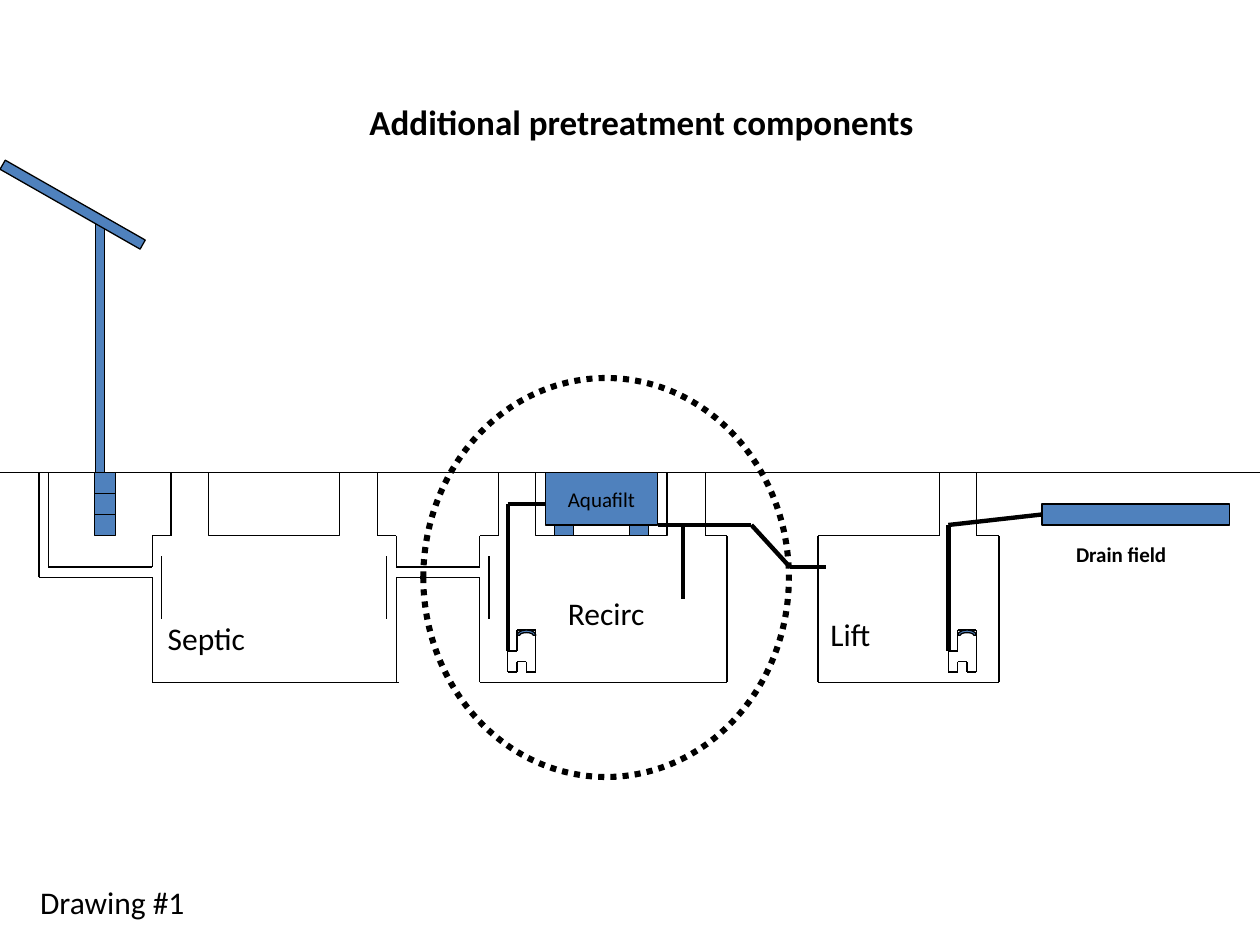
from lxml import etree
from pptx import Presentation
from pptx import util as u
from pptx.dml.color import RGBColor
from pptx.enum import dml, shapes, text
from pptx.oxml.ns import qn

COL, ROW, MARGIN = 0.0744, 1 / 12, 0.012
GROUND = 45
BLACK, BLUE = "000000", "4F81BD"
RECT = shapes.MSO_SHAPE.RECTANGLE


def color(hex_value):
    return RGBColor.from_string(hex_value)


def place(box, c, r):
    return u.Inches(MARGIN + (box[0] + c) * COL), u.Inches((box[1] + r) * ROW)


def size(w, h):
    return u.Inches(w * COL), u.Inches(h * ROW)


def polyline(s, box, points, width=0.75):
    for start, end in zip(points, points[1:]):
        line = s.shapes.add_connector(
            shapes.MSO_CONNECTOR.STRAIGHT, *place(box, *start), *place(box, *end))
        line.line.color.rgb = color(BLACK)
        line.line.width = u.Pt(width)
        etree.SubElement(line._element.spPr, qn("a:effectLst"))


def block(s, box, c, r, w, h, fill=BLUE, kind=RECT):
    sp = s.shapes.add_shape(kind, *place(box, c, r), *size(w, h))
    sp.shadow.inherit = False
    if fill:
        sp.fill.solid()
        sp.fill.fore_color.rgb = color(fill)
    else:
        sp.fill.background()
    sp.line.color.rgb = color(BLACK)
    sp.line.width = u.Pt(0.75)
    return sp


def write(sp, wording, points, bold=False, align=text.PP_ALIGN.LEFT,
          anchor=text.MSO_ANCHOR.TOP, wrap=False):
    tf = sp.text_frame
    tf.word_wrap = wrap
    tf.vertical_anchor = anchor
    p = tf.paragraphs[0]
    p.alignment = align
    r = p.add_run()
    r.text = wording
    r.font.name = "Calibri"
    r.font.size = u.Pt(points)
    r.font.bold = bold
    r.font.color.rgb = color(BLACK)


def label(s, box, c, r, w, h, wording, points=18, bold=False):
    sp = s.shapes.add_textbox(*place(box, c, r), *size(w, h))
    write(sp, wording, points, bold)


def heading(s, box, wording):
    sp = s.shapes.title
    sp.left, sp.top = place(box, 0, 0)
    sp.width, sp.height = size(62.8, 5.3)
    write(sp, wording, 20, bold=True, wrap=True)


def solar_panel(s, box):
    for i in range(3):
        block(s, box, 0, 2 * i, 2.25, 2)
    block(s, box, 0.1, -24, 1, 24)
    panel = block(s, box, -10.9, -26, 17.2, 1)
    panel.rotation = 29.7


def pump(s, box):
    polyline(s, box, [(1, 0), (3, 0), (3, 4), (2, 4), (2, 3), (1, 3),
                      (1, 4), (0, 4), (0, 2), (1, 2), (1, 0)])
    block(s, box, 1, 0, 2, 1, kind=shapes.MSO_SHAPE.BLOCK_ARC)


def inlet_shoulder(s, box, c=0, turn=1):
    polyline(s, box, [(c + 2 * turn, 0), (c + 2 * turn, 6), (c, 6), (c, 9)])
    polyline(s, box, [(c, 10), (c, 20)])
    polyline(s, box, [(c + turn, 8), (c + turn, 14)])


def septic_tank(s, box):
    polyline(s, box, [(-11.1, 0), (-11.1, 9), (0, 9)])
    polyline(s, box, [(-12.1, 0), (-12.1, 10), (0, 10)])
    inlet_shoulder(s, box)
    inlet_shoulder(s, box, 26, -1)
    polyline(s, box, [(0, 20), (26.3, 20)])
    for row in (9, 10):
        polyline(s, box, [(26, row), (34.9, row)])
    block(s, box, 6, 0, 14, 6, fill=None)
    label(s, box, 0.3, 13.4, 11, 4.8, "Septic")


def recirculation_tank(s, box):
    inlet_shoulder(s, box)
    polyline(s, box, [(0, 20), (26.4, 20), (26.4, 6), (24.1, 6), (24.1, 0)])
    block(s, box, 6, 0, 14, 6, fill=None)
    filter_pod = block(s, box, 7, 0, 12, 5)
    write(filter_pod, "Aquafilt", 12, align=text.PP_ALIGN.CENTER,
          anchor=text.MSO_ANCHOR.MIDDLE)
    for foot in (8, 16):
        block(s, box, foot, 5, 2, 1)
    pump(s, (box[0] + 3, box[1] + 15))
    polyline(s, box, [(3, 17), (3, 3), (7, 3)], 2.5)
    polyline(s, box, [(19, 5), (29, 5), (33.1, 9), (37, 9)], 2.5)
    polyline(s, box, [(21.7, 5), (21.7, 12)], 2.25)
    label(s, box, 8.1, 11, 11, 4.8, "Recirc")
    ring = block(s, box, -6, -9, 39, 38, fill=None, kind=shapes.MSO_SHAPE.OVAL)
    ring.line.width = u.Pt(3.5)
    ring.line.dash_style = dml.MSO_LINE.ROUND_DOT


def lift_station(s, box):
    polyline(s, box, [(13, 0), (13, 6), (0, 6), (0, 20), (19.3, 20),
                      (19.3, 6), (16.9, 6), (16.9, 0)])
    pump(s, (box[0] + 13.9, box[1] + 15))
    polyline(s, box, [(13.9, 17), (13.9, 5), (23.9, 4)], 2.5)
    label(s, box, 0, 13, 7.1, 4.8, "Lift")


def drain_field(s, box):
    block(s, box, 0, 0, 20, 2)
    label(s, box, 2.3, 3, 17.7, 3.6, "Drain field", 12, bold=True)


def main():
    prs = Presentation()
    prs.slide_width, prs.slide_height = u.Inches(10), u.Inches(7.5)
    s = prs.slides.add_slide(prs.slide_layouts[5])
    heading(s, (37.9, 9), "Additional pretreatment components")
    polyline(s, (0, GROUND), [(-MARGIN / COL, 0), ((10 - MARGIN) / COL, 0)])
    solar_panel(s, (9.9, GROUND))
    septic_tank(s, (16.1, GROUND))
    recirculation_tank(s, (51, GROUND))
    lift_station(s, (87.1, GROUND))
    drain_field(s, (111, GROUND + 3))
    label(s, (2.8, 83.5), 0, 0, 18.3, 4.8, "Drawing #1")
    prs.save("out.pptx")


if __name__ == "__main__":
    main()
